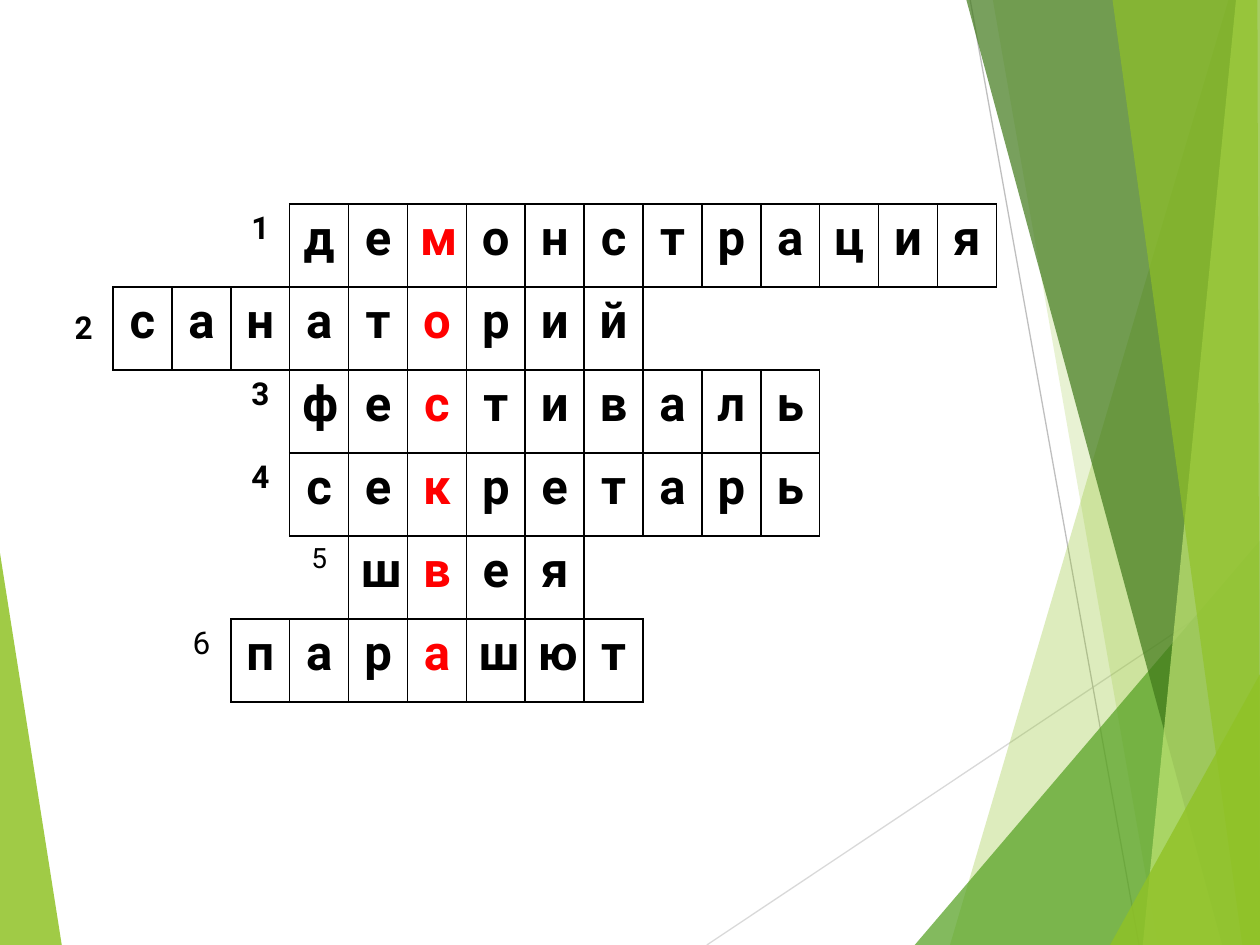
import pptx
import pptx.dml.color
import pptx.enum.shapes
import pptx.enum.text
import pptx.oxml
import pptx.oxml.ns
import pptx.util

Inches = pptx.util.Inches
Pt = pptx.util.Pt

COLORS = {
    "text": "000000", "keyword": "FF0000", "lime": "90C226",
    "green": "54A021", "forest": "3F7819", "pale": "C0E474",
    "light_gray": "D9D9D9", "gray": "BFBFBF",
}
FONT = "Roboto"
ROWS, COLUMNS, KEYWORD_COLUMN = 6, 16, 6
NO_STYLE = "{2D5ABB26-0587-4C30-8999-92F81FD0307C}"

# word, column of its first letter, format of its number
WORDS = [
    ("демонстрация", 4, {"bold": True}),
    ("санаторий", 1, {"bold": True, "anchor": pptx.enum.text.MSO_ANCHOR.MIDDLE}),
    ("фестиваль", 4, {"bold": True}),
    ("секретарь", 4, {"bold": True}),
    ("швея", 5, {"size": 16}),
    ("парашют", 3, {}),
]

# start, end, colour
LINES = [
    ((5.61, 7.5), (10, 4.57), "light_gray"),
    ((7.7, 0), (9.04, 7.5), "gray"),
]

# corners, colour, opacity in percent
FACETS = [
    ([(9.75, 0), (7.54, 7.5), (10, 7.5), (10, 0)], "lime", 30),
    ([(7.88, 0), (9.19, 7.5), (10, 7.5), (10, 0)], "lime", 20),
    ([(7.26, 7.5), (10, 4.29), (10, 7.5)], "green", 72),
    ([(7.67, 0), (9.7, 7.5), (10, 7.5), (10, 0)], "forest", 70),
    ([(9.81, 0), (9.07, 7.5), (10, 7.5), (10, 0)], "pale", 70),
    ([(8.83, 0), (9.86, 7.5), (10, 7.5), (9.98, 0)], "lime", 65),
    ([(8.81, 7.5), (10, 5.35), (10, 7.5)], "lime", 80),
]
LEFT_FACET = ([(0, 4.39), (0.49, 7.5), (0, 7.5)], "lime", 85)


def rgb(name):
    return pptx.dml.color.RGBColor.from_string(COLORS[name])


def add_xml(parent, tag, **attributes):
    element = pptx.oxml.parse_xml(f"<{tag} {pptx.oxml.ns.nsdecls('a')}/>")
    for name, value in attributes.items():
        element.set(name, str(value))
    parent.append(element)
    return element


def add_facet(slide, corners, color, opacity):
    points = [(Inches(x), Inches(y)) for x, y in corners]
    builder = slide.shapes.build_freeform(*points[0])
    builder.add_line_segments(points[1:], close=True)
    shape = builder.convert_to_shape()
    shape.shadow.inherit = False
    shape.line.fill.background()
    shape.fill.solid()
    shape.fill.fore_color.rgb = rgb(color)
    color_element = shape.fill._xPr.find(".//" + pptx.oxml.ns.qn("a:srgbClr"))
    add_xml(color_element, "a:alpha", val=opacity * 1000)


def add_line(slide, start, end, color):
    connector = slide.shapes.add_connector(
        pptx.enum.shapes.MSO_CONNECTOR.STRAIGHT,
        *(Inches(value) for value in start + end))
    connector.line.color.rgb = rgb(color)
    connector.line.width = Pt(0.75)
    add_xml(connector._element.spPr, "a:effectLst")


def write_text(cell, text, size=18, bold=False, color="text",
               anchor=pptx.enum.text.MSO_ANCHOR.TOP):
    cell.vertical_anchor = anchor
    paragraph = cell.text_frame.paragraphs[0]
    paragraph.alignment = pptx.enum.text.PP_ALIGN.CENTER
    run = paragraph.add_run()
    run.text = text
    run.font.name = FONT
    run.font.size = Pt(size)
    run.font.bold = bold
    run.font.color.rgb = rgb(color)


def has_letter(row, column):
    if not 0 <= row < ROWS:
        return False
    word, first, _ = WORDS[row]
    return first <= column < first + len(word)


def format_cell(cell, row, column):
    """Draw each side that touches a letter, and leave the cell unfilled."""
    properties = cell._tc.get_or_add_tcPr()
    neighbours = {"L": (row, column - 1), "R": (row, column + 1),
                  "T": (row - 1, column), "B": (row + 1, column)}
    for side, neighbour in neighbours.items():
        border = add_xml(properties, f"a:ln{side}", w=Pt(1))
        if has_letter(row, column) or has_letter(*neighbour):
            fill = add_xml(border, "a:solidFill")
            add_xml(fill, "a:srgbClr", val=COLORS["text"])
        else:
            add_xml(border, "a:noFill")
    cell.fill.background()


def add_crossword(slide):
    frame = slide.shapes.add_table(ROWS, COLUMNS, Inches(0.43), Inches(1.62),
                                   Inches(7.48), Inches(3.95))
    table = frame.table
    table.first_row = table.horz_banding = False
    table._tbl.tblPr.find(pptx.oxml.ns.qn("a:tableStyleId")).text = NO_STYLE
    for row in range(ROWS):
        for column in range(COLUMNS):
            format_cell(table.cell(row, column), row, column)
    for row, (word, first, number_format) in enumerate(WORDS):
        write_text(table.cell(row, first - 1), str(row + 1), **number_format)
        for column, letter in enumerate(word, first):
            color = "keyword" if column == KEYWORD_COLUMN else "text"
            write_text(table.cell(row, column), letter, size=28, bold=True,
                       color=color)


def main():
    presentation = pptx.Presentation()
    presentation.slide_width = Inches(10)
    presentation.slide_height = Inches(7.5)
    slide = presentation.slides.add_slide(presentation.slide_layouts[6])
    add_facet(slide, *LEFT_FACET)
    for line in LINES:
        add_line(slide, *line)
    for facet in FACETS:
        add_facet(slide, *facet)
    add_crossword(slide)
    presentation.save("out.pptx")


if __name__ == "__main__":
    main()
